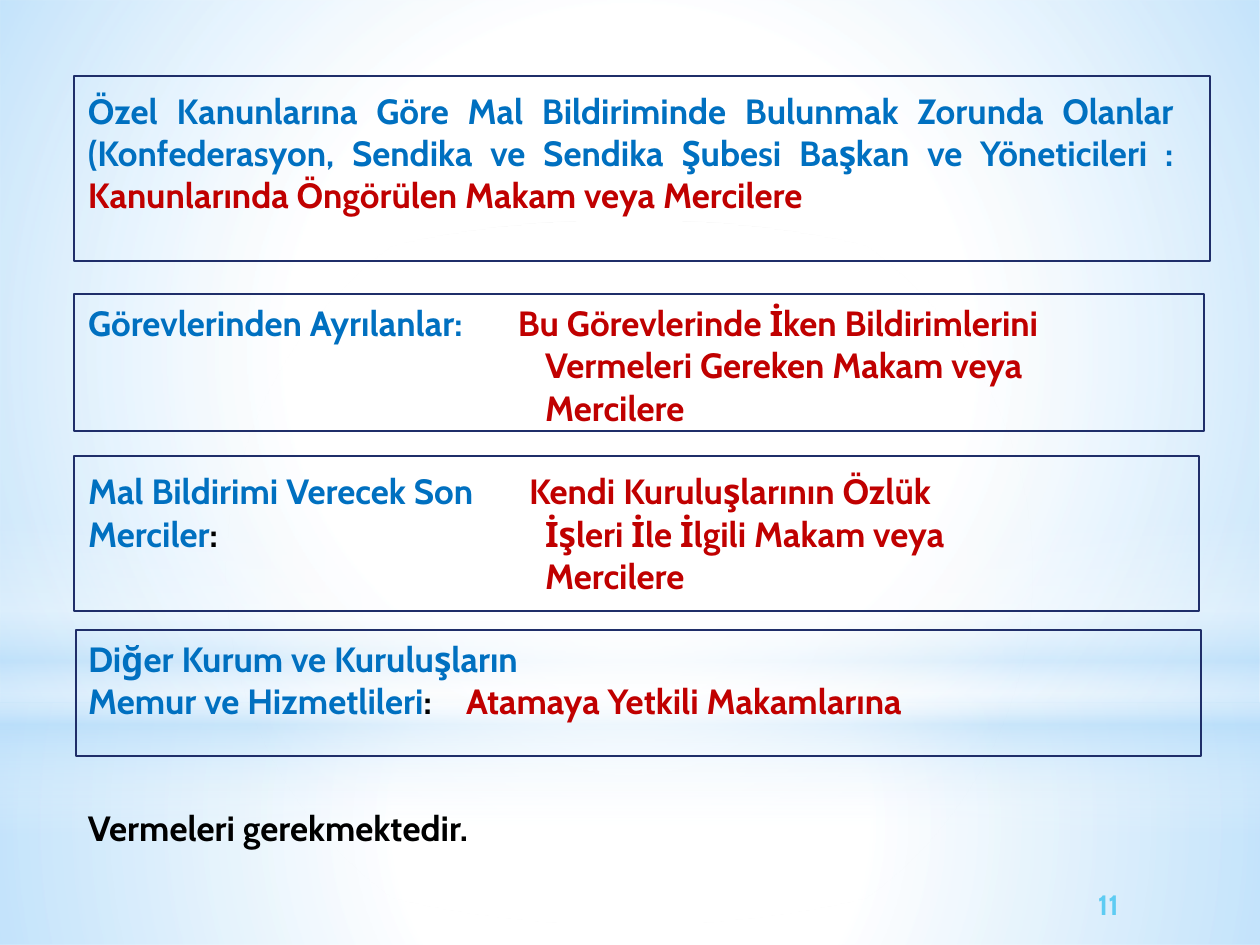
"""Build a slide on where asset declarations must be filed."""
from lxml import etree
from pptx import Presentation
from pptx import util as u
from pptx.dml import color
from pptx.enum import shapes, text
from pptx.oxml import ns

PX = 914400 / 126
BLUE, RED, BLACK, NAVY, SKY, WHITE = "0070C0", "C00000", "000000", "1F2E69", "B4DCFA", "FFFFFF"
RECT, OVAL = shapes.MSO_SHAPE.RECTANGLE, shapes.MSO_SHAPE.OVAL


def rgb(code):
    return color.RGBColor.from_string(code)


def px(*values):
    return [u.Emu(round(value * PX)) for value in values]


deck = Presentation()
deck.slide_width, deck.slide_height = px(1260, 945)
page = deck.slides.add_slide(deck.slide_layouts[6])
page.background.fill.solid()
page.background.fill.fore_color.rgb = rgb(WHITE)

glows = [
    (RECT, (0, 703, 1260, 242), True, [(0, WHITE, 91), (37, WHITE, 76), (100, SKY, 79)]),
    (RECT, (0, 0, 1260, 703), True, [(0, WHITE, 89), (48, WHITE, 62), (100, SKY, 79)]),
    (RECT, (0, 519, 1260, 315), False, [(0, WHITE, 0), (29, WHITE, 30), (45, SKY, 40),
                                        (55, WHITE, 26), (65, SKY, 60), (100, WHITE, 0)]),
    (OVAL, (0, 221, 1260, 703), True, [(0, WHITE, 100), (56, WHITE, 0)]),
]
for kind, place, radial, stops in glows:
    glow = page.shapes.add_shape(kind, *px(*place))
    glow.shadow.inherit = False
    glow.line.fill.background()
    glow.fill.background()
    empty = glow.element.spPr.find(ns.qn("a:noFill"))
    gradient = etree.Element(ns.qn("a:gradFill"), rotWithShape="1")
    stop_list = etree.SubElement(gradient, ns.qn("a:gsLst"))
    for position, code, opacity in stops:
        stop = etree.SubElement(stop_list, ns.qn("a:gs"), pos=str(position * 1000))
        tint = etree.SubElement(stop, ns.qn("a:srgbClr"), val=code)
        etree.SubElement(tint, ns.qn("a:alpha"), val=str(opacity * 1000))
    if radial:
        circle = etree.SubElement(gradient, ns.qn("a:path"), path="circle")
        etree.SubElement(circle, ns.qn("a:fillToRect"), l="50000", t="50000", r="50000", b="50000")
    else:
        etree.SubElement(gradient, ns.qn("a:lin"), ang="5400000", scaled="0")
    empty.getparent().replace(empty, gradient)

blocks = [
    ((74, 76, 1136, 185), 89, None, [
        [("Özel Kanunlarına Göre Mal Bildiriminde Bulunmak Zorunda Olanlar (Konfederasyon, "
          "Sendika ve Sendika Şubesi Başkan ve Yöneticileri : ", BLUE),
         ("Kanunlarında Öngörülen Makam veya Mercilere", RED)]]),
    ((74, 294, 1130, 137), 302, (430, 457, 457), [
        [("Görevlerinden Ayrılanlar:\t", BLUE), ("Bu Görevlerinde İken Bildirimlerini", RED)],
        [("\tVermeleri Gereken Makam veya", RED)],
        [("\tMercilere", RED)]]),
    ((74, 456, 1125, 155), 470, (441, 457, 457), [
        [("Mal Bildirimi Verecek Son\t", BLUE), ("Kendi Kuruluşlarının Özlük", RED)],
        [("Merciler", BLUE), (":\t", BLACK), ("İşleri İle İlgili Makam veya", RED)],
        [("\tMercilere", RED)]]),
    ((76, 630, 1125, 126), 638, (378, 378), [
        [("Diğer Kurum ve Kuruluşların", BLUE)],
        [("Memur ve Hizmetlileri", BLUE), (":\t", BLACK), ("Atamaya Yetkili Makamlarına", RED)]]),
    ((76, 800, 1111, 54), 806, None, [[("Vermeleri gerekmektedir.", BLACK)]]),
    ((1086, 879, 160, 51), None, None, [[("11", SKY)]]),
]
for (left, top, width, height), text_top, tabs, lines in blocks:
    numbered = text_top is None
    framed = top < 800
    if framed:
        box = page.shapes.add_shape(RECT, *px(left, top, width, height))
        box.shadow.inherit = False
        box.fill.background()
        box.line.color.rgb = rgb(NAVY)
        box.line.width = u.Pt(1.25)
    else:
        box = page.shapes.add_textbox(*px(left, top, width, height))
    frame = box.text_frame
    inset_left, inset_top, inset_right = px(12 if numbered else 88 - left,
                                            0 if numbered else text_top - top,
                                            36 if framed else 12)
    layout = {
        "word_wrap": True,
        "margin_left": inset_left, "margin_top": inset_top,
        "margin_right": inset_right, "margin_bottom": 0,
        "vertical_anchor": text.MSO_ANCHOR.MIDDLE if numbered else text.MSO_ANCHOR.TOP,
    }
    for name, value in layout.items():
        setattr(frame, name, value)
    for index, line in enumerate(lines):
        para = frame.paragraphs[0] if index == 0 else frame.add_paragraph()
        para.alignment = text.PP_ALIGN.JUSTIFY if top == 76 else text.PP_ALIGN.LEFT
        if tabs:
            tab_list = etree.SubElement(para._p.get_or_add_pPr(), ns.qn("a:tabLst"))
            etree.SubElement(tab_list, ns.qn("a:tab"), pos=str(px(tabs[index])[0]), algn="l")
        for words, code in line:
            span = para.add_run()
            span.text = words
            style = {"name": "Cabin", "size": u.Pt(16 if numbered else 20), "bold": True}
            for name, value in style.items():
                setattr(span.font, name, value)
            span.font.color.rgb = rgb("5ECCF3" if numbered else code)

deck.save("out.pptx")
